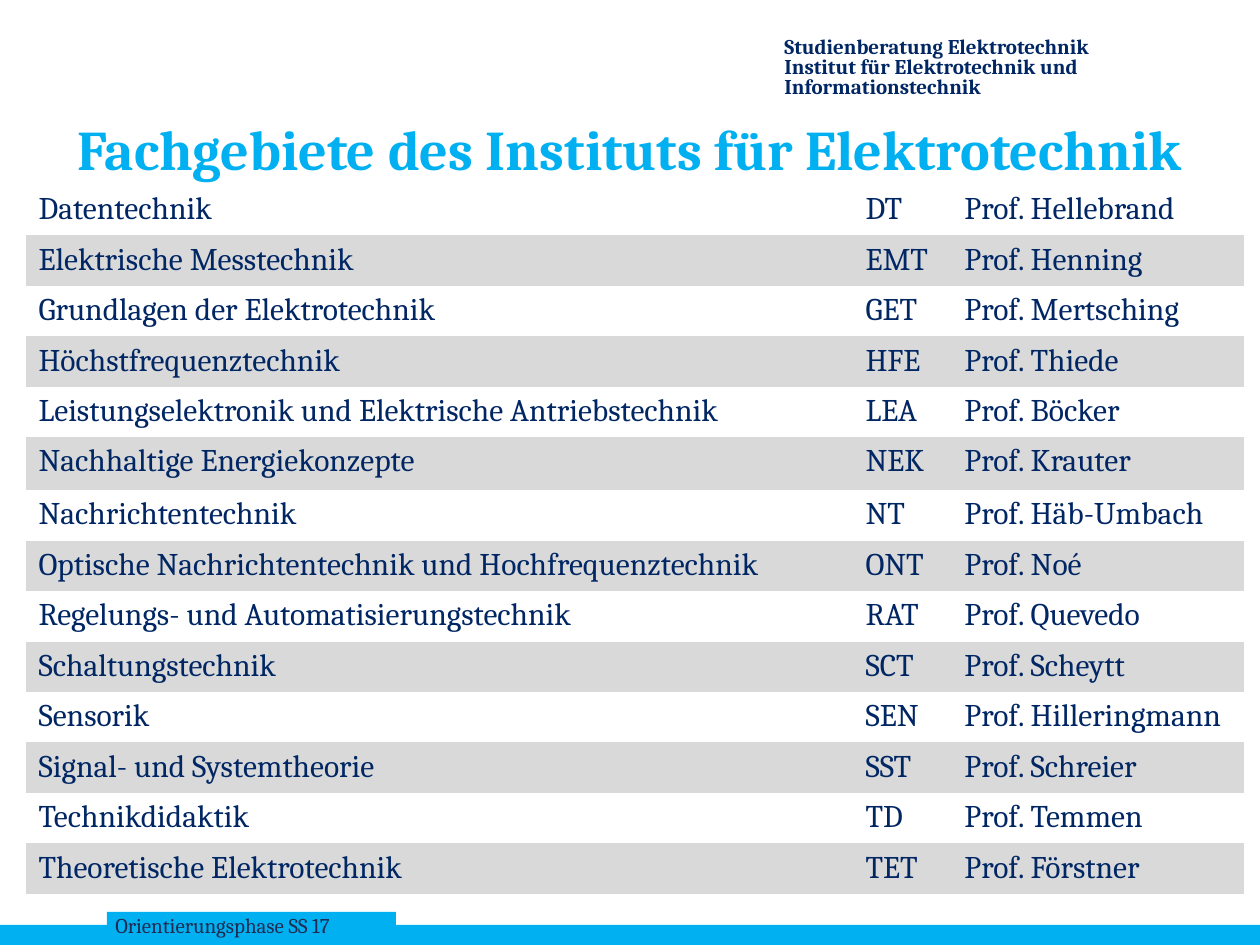
from pptx import Presentation
from pptx.dml.color import RGBColor
from pptx.enum.shapes import MSO_SHAPE as Shape
from pptx.enum.text import MSO_ANCHOR as Anchor, PP_ALIGN as Align
from pptx.oxml.ns import qn
from pptx.util import Emu, Pt

PX = 914400 // 126
FONT = "Cambria"
CYAN = RGBColor(0x00, 0xB0, 0xF0)
NAVY = RGBColor(0x00, 0x26, 0x64)
SLATE = RGBColor(0x21, 0x2B, 0x52)
GREY = RGBColor(0xD9, 0xD9, 0xD9)
PLAIN_TABLE = "{2D5ABB26-0587-4C30-8999-92F81FD0307C}"

TITLE = "Fachgebiete des Instituts für Elektrotechnik"
SENDER = [
    "Studienberatung Elektrotechnik",
    "Institut für Elektrotechnik und Informationstechnik",
]
EVENT = "Orientierungsphase SS 17"
SUBJECTS = [
    ("Datentechnik", "DT", "Prof. Hellebrand"),
    ("Elektrische Messtechnik", "EMT", "Prof. Henning"),
    ("Grundlagen der Elektrotechnik", "GET", "Prof. Mertsching"),
    ("Höchstfrequenztechnik", "HFE", "Prof. Thiede"),
    ("Leistungselektronik und Elektrische Antriebstechnik", "LEA", "Prof. Böcker"),
    ("Nachhaltige Energiekonzepte", "NEK", "Prof. Krauter"),
    ("Nachrichtentechnik", "NT", "Prof. Häb-Umbach"),
    ("Optische Nachrichtentechnik und Hochfrequenztechnik", "ONT", "Prof. Noé"),
    ("Regelungs- und Automatisierungstechnik", "RAT", "Prof. Quevedo"),
    ("Schaltungstechnik", "SCT", "Prof. Scheytt"),
    ("Sensorik", "SEN", "Prof. Hilleringmann"),
    ("Signal- und Systemtheorie", "SST", "Prof. Schreier"),
    ("Technikdidaktik", "TD", "Prof. Temmen"),
    ("Theoretische Elektrotechnik", "TET", "Prof. Förstner"),
]
COLUMNS = [827, 99, 292]
ROW_HEIGHT = 48
TALL_ROWS = {"NEK": 53}
FOOTER_BARS = [(0, 925, 1260, 21), (107, 912, 289, 16)]


def px(*lengths):
    return [Emu(length * PX) for length in lengths]


def add_span(para, text, size, color, bold=False):
    span = para.add_run()
    span.text = text
    span.font.name = FONT
    span.font.size = Pt(size)
    span.font.bold = bold
    span.font.color.rgb = color


def add_text(page, place, lines, size, color, bold=False, spacing=None, align=Align.LEFT):
    frame = page.shapes.add_textbox(*px(*place)).text_frame
    frame.word_wrap = True
    for index, line in enumerate(lines):
        para = frame.add_paragraph() if index else frame.paragraphs[0]
        para.alignment = align
        para.line_spacing = spacing
        add_span(para, line, size, color, bold)
    return frame


def add_bar(page, place):
    bar = page.shapes.add_shape(Shape.RECTANGLE, *px(*place))
    bar.shadow.inherit = False
    bar.fill.solid()
    bar.fill.fore_color.rgb = CYAN
    bar.line.fill.background()


def add_subjects(page, left, top):
    heights = [TALL_ROWS.get(code, ROW_HEIGHT) for _, code, _ in SUBJECTS]
    place = px(left, top, sum(COLUMNS), sum(heights))
    table = page.shapes.add_table(len(SUBJECTS), len(COLUMNS), *place).table
    table.first_row = False
    table.horz_banding = False
    table._tbl.tblPr.find(qn("a:tableStyleId")).text = PLAIN_TABLE
    for column, width in zip(table.columns, px(*COLUMNS)):
        column.width = width
    for row, height in zip(table.rows, px(*heights)):
        row.height = height
    for row_index, subject in enumerate(SUBJECTS):
        for column_index, text in enumerate(subject):
            cell = table.cell(row_index, column_index)
            if row_index % 2:
                cell.fill.solid()
                cell.fill.fore_color.rgb = GREY
            else:
                cell.fill.background()
            add_span(cell.text_frame.paragraphs[0], text, 18, NAVY)


def main():
    deck = Presentation()
    deck.slide_width, deck.slide_height = px(1260, 945)
    page = deck.slides.add_slide(deck.slide_layouts[6])
    for place in FOOTER_BARS:
        add_bar(page, place)
    add_text(page, (772, 32, 476, 53), SENDER, 12, NAVY, bold=True, spacing=0.8)
    add_text(page, (103, 906, 354, 38), [EVENT], 12, SLATE)
    title = add_text(page, (63, 38, 1134, 157), [TITLE], 32, CYAN, bold=True, align=Align.CENTER)
    title.vertical_anchor = Anchor.BOTTOM
    title.margin_left = title.margin_right = 0
    title.margin_bottom = px(13)[0]
    add_subjects(page, 26, 185)
    deck.save("out.pptx")


if __name__ == "__main__":
    main()
